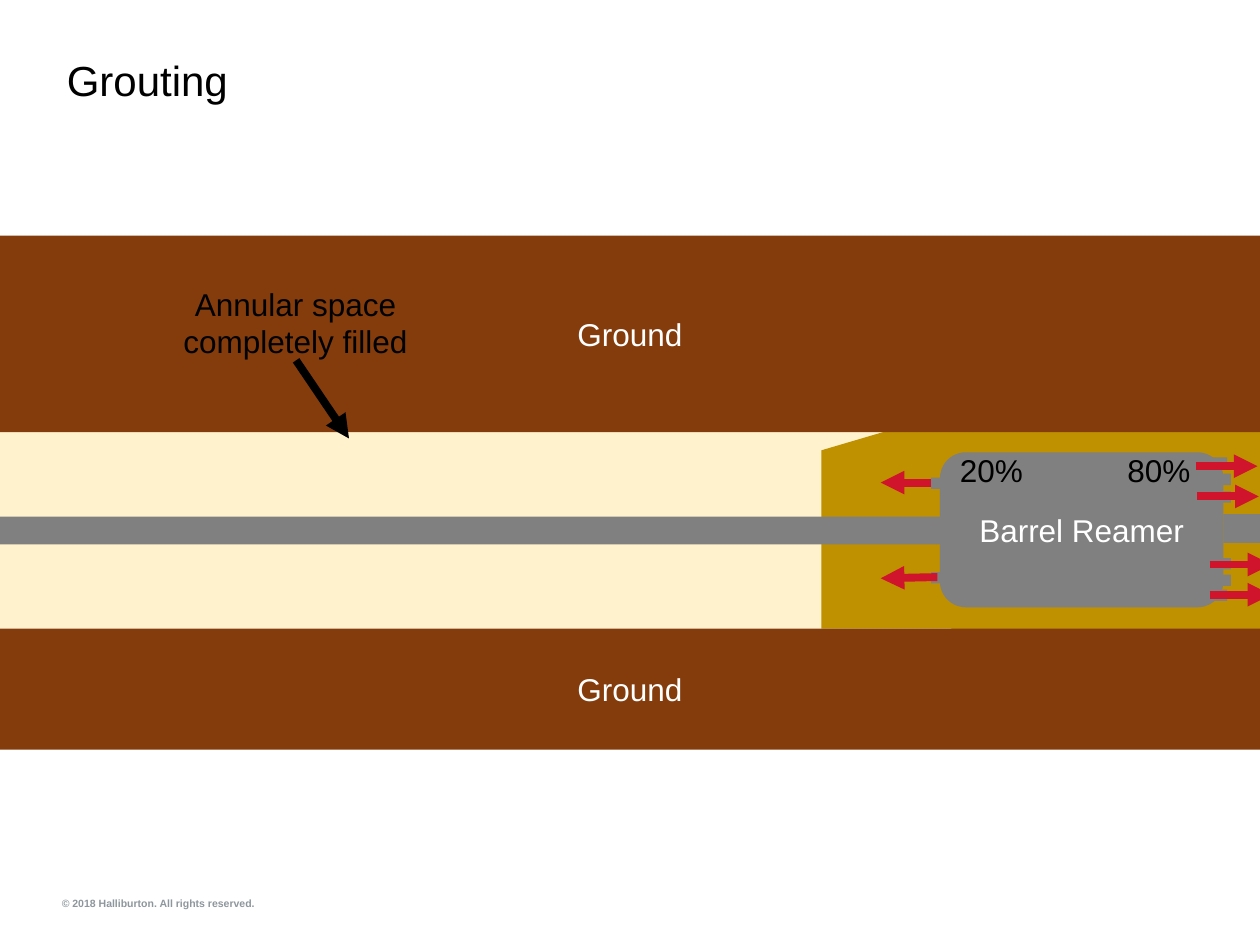
from lxml import etree
from pptx import Presentation
from pptx.dml.color import RGBColor
from pptx.enum import shapes, text
from pptx.oxml.ns import qn
from pptx.util import Inches, Pt

COLORS = {
    "ground": "843C0C", "grout": "FFF2CC", "mud": "BF9000", "steel": "808080",
    "flow": "CF142B", "black": "000000", "white": "FFFFFF", "footer": "8E979D",
}
SHAPE = shapes.MSO_SHAPE
CENTER = text.PP_ALIGN.CENTER
MIDDLE = text.MSO_ANCHOR.MIDDLE
TOP = text.MSO_ANCHOR.TOP


class Deck:
    """Holds the style and the current slide."""
    font = "Arial"
    body_size = 18
    arrow_width = 4.5

    def __init__(self, width, height):
        self.prs = Presentation()
        self.prs.slide_width, self.prs.slide_height = Inches(width), Inches(height)
        self.s = self.prs.slides.add_slide(self.prs.slide_layouts[5])

    def set_text(self, sp, words, color, size=None, bold=False, align=None, **frame):
        tf = sp.text_frame
        for name, value in frame.items():
            setattr(tf, name, value)
        p = tf.paragraphs[0]
        p.alignment = align or text.PP_ALIGN.LEFT
        r = p.add_run()
        r.text = words
        style = {"name": self.font, "size": Pt(size or self.body_size), "bold": bold}
        for name, value in style.items():
            setattr(r.font, name, value)
        r.font.color.rgb = RGBColor.from_string(COLORS[color])

    def title(self, words, box):
        sp = self.s.shapes.title
        sp.left, sp.top, sp.width, sp.height = map(Inches, box)
        self.set_text(sp, words, "black", 24, vertical_anchor=TOP, word_wrap=True,
                      margin_left=Inches(0.1), margin_right=Inches(0.1),
                      margin_top=0, margin_bottom=Inches(0.05))

    def block(self, box, color, kind=SHAPE.RECTANGLE, words=None):
        sp = self.s.shapes.add_shape(kind, *map(Inches, box))
        sp.shadow.inherit = False
        sp.fill.solid()
        sp.fill.fore_color.rgb = RGBColor.from_string(COLORS[color])
        sp.line.fill.background()
        if words:
            self.set_text(sp, words, "white", align=CENTER, vertical_anchor=MIDDLE)

    def label(self, box, words, color="black", **style):
        sp = self.s.shapes.add_textbox(*map(Inches, box))
        self.set_text(sp, words, color, **{"word_wrap": True, **style})

    def arrow(self, start, end, color):
        line = self.s.shapes.add_connector(
            shapes.MSO_CONNECTOR.STRAIGHT, *map(Inches, start + end))
        line.line.color.rgb = RGBColor.from_string(COLORS[color])
        line.line.width = Pt(self.arrow_width)
        props = line._element.spPr
        etree.SubElement(props.find(qn("a:ln")), qn("a:tailEnd"), type="triangle")
        etree.SubElement(props, qn("a:effectLst"))


def main():
    deck = Deck(10, 7.5)
    deck.title("Grouting", (0.43, 0.43, 9.15, 0.93))
    deck.label((0.49, 7.12, 1.55, 0.1), "© 2018 Halliburton. All rights reserved.",
               "footer", size=6, bold=True, word_wrap=False,
               margin_left=0, margin_right=0, margin_top=0, margin_bottom=0)

    # Bore hole: grout, drilling mud and pipe
    deck.block((0, 3.43, 10, 1.56), "grout")
    deck.block((6.52, 3.22, 1.2, 1.77), "mud", SHAPE.FLOWCHART_MANUAL_INPUT)
    deck.block((0, 4.1, 7.46, 0.22), "steel")
    deck.block((7.55, 3.36, 2.54, 1.72), "mud")

    # Barrel reamer with its nozzles and drill rod
    deck.block((7.46, 3.59, 2.25, 1.23), "steel", SHAPE.ROUNDED_RECTANGLE, "Barrel Reamer")
    nozzles = [(7.39, 3.79), (7.39, 4.54), (9.64, 3.76), (9.64, 3.9),
               (9.64, 4.43), (9.64, 4.56), (9.61, 4.68), (9.61, 3.63)]
    for left, top in nozzles:
        deck.block((left, top, 0.13, 0.09), "steel")
    deck.block((9.71, 4.08, 0.39, 0.23), "steel")

    # Ground above and below the hole
    for top, height in ((1.87, 1.56), (4.99, 0.96)):
        deck.block((0, top, 10, height), "ground", words="Ground")

    # Flow out of the nozzles: back to the left, forward to the right
    deck.arrow((7.39, 3.83), (6.99, 3.83), "flow")
    deck.arrow((7.44, 4.58), (6.99, 4.59), "flow")
    for left, top in ((9.5, 3.94), (9.49, 3.7), (9.6, 4.72), (9.6, 4.48)):
        deck.arrow((left, top), (left + 0.49, top), "flow")
    for left, share in ((7.52, "20%"), (8.85, "80%")):
        deck.label((left, 3.53, 0.74, 0.4), share)

    # Callout
    deck.arrow((2.35, 2.86), (2.77, 3.48), "black")
    deck.label((1.3, 2.21, 2.09, 0.71), "Annular space completely filled", align=CENTER)

    deck.prs.save("out.pptx")


if __name__ == "__main__":
    main()
